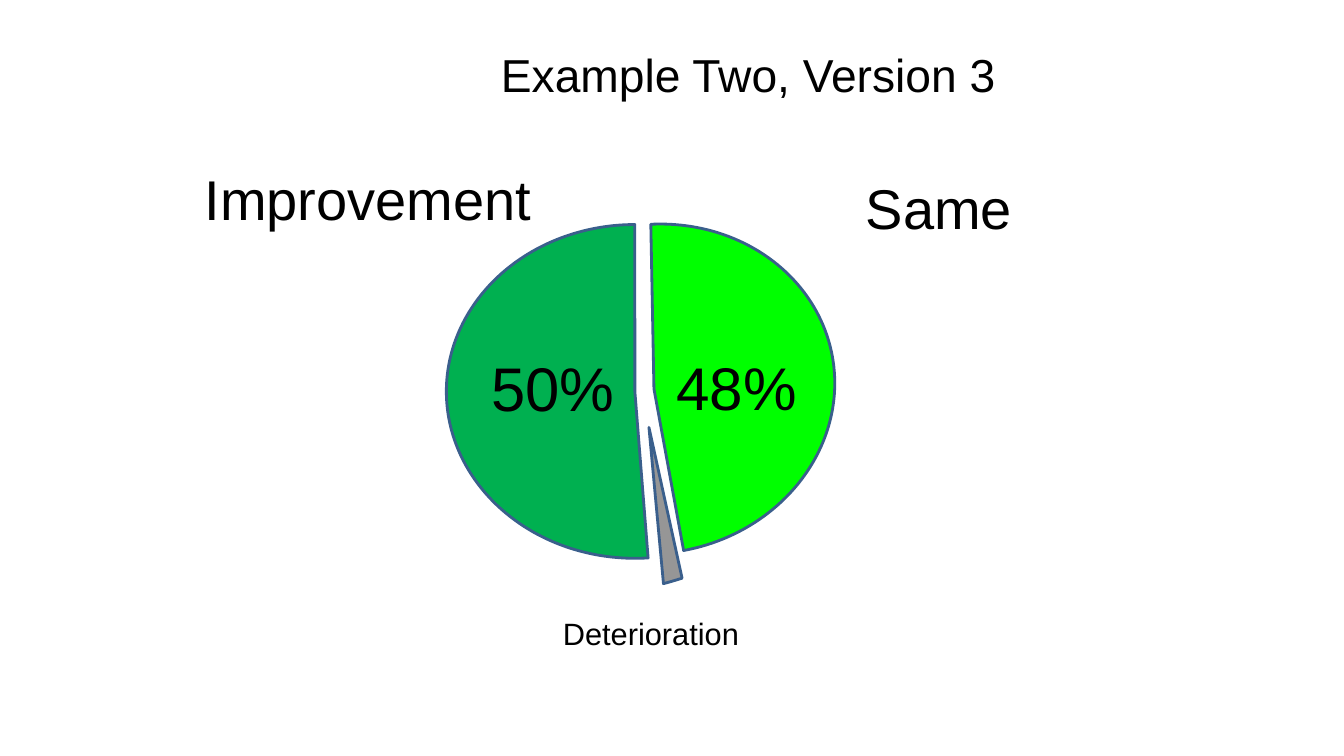
from pptx import Presentation
from pptx.dml.color import RGBColor
from pptx.enum.shapes import MSO_SHAPE
from pptx.enum.text import MSO_ANCHOR, PP_ALIGN
from pptx.util import Cm, Pt

TITLE = "Example Two, Version 3"
TITLE_BOX = (12.37, 1.02, 13.11, 1.68)
OUTLINE = "3A5F8C"

# Box in cm (left, top, width, height), rotation, start and end angle, fill
SLICES = [
    ((11.25, 5.66, 9.5, 8.41), 0, 85.44, 270, "00B050"),
    ((11.91, 5.66, 9.14, 8.28), 169.6, 99.3, 270, "00FF00"),
    ((10.26, 6.91, 12.19, 7.72), 338.3, 99.3, 106.38, "969696"),
]

# Text, box in cm, size in points, alignment
LABELS = [
    ("Improvement", (4.95, 4.27, 8.64, 1.6), 40, PP_ALIGN.CENTER),
    ("50%", (10.74, 8.95, 6.4, 1.8), 44, PP_ALIGN.CENTER),
    ("48%", (17.04, 8.95, 4.19, 1.8), 43, PP_ALIGN.LEFT),
    ("Same", (19.95, 4.5, 7.42, 1.6), 40, PP_ALIGN.CENTER),
    ("Deterioration", (10.93, 15.55, 10.95, 1.0), 22, PP_ALIGN.CENTER),
]


def color(hex_string):
    return RGBColor.from_string(hex_string)


def set_attributes(target, values):
    for name, value in values.items():
        setattr(target, name, value)


def write_text(shape, text, size, alignment, spacing, frame_format):
    frame = shape.text_frame
    frame.text = text
    set_attributes(frame, frame_format)
    paragraph = frame.paragraphs[0]
    set_attributes(paragraph, {"alignment": alignment, "line_spacing": spacing})
    font = paragraph.runs[0].font
    set_attributes(font, {"name": "Arial", "size": Pt(size)})
    font.color.rgb = color("000000")


def add_slice(slide, box, rotation, start, end, fill):
    shape = slide.shapes.add_shape(MSO_SHAPE.PIE, *map(Cm, box))
    shape.shadow.inherit = False
    shape.rotation = rotation
    # Angles are stored in 1/60000 degree, adjustments in 1/100000
    for index, angle in enumerate((start, end)):
        shape.adjustments[index] = angle * 0.6
    shape.fill.solid()
    shape.fill.fore_color.rgb = color(fill)
    shape.line.color.rgb = color(OUTLINE)
    shape.line.width = Pt(2)


def main():
    presentation = Presentation()
    set_attributes(presentation, {"slide_width": Cm(33.87), "slide_height": Cm(19.05)})
    slide = presentation.slides.add_slide(presentation.slide_layouts[5])

    # Pie slices
    for pie_slice in SLICES:
        add_slice(slide, *pie_slice)

    # Slice labels
    margins = ("margin_left", "margin_top", "margin_right", "margin_bottom")
    label_format = {
        "word_wrap": True,
        "vertical_anchor": MSO_ANCHOR.TOP,
        **dict.fromkeys(margins, 0),
    }
    for text, box, size, alignment in LABELS:
        label = slide.shapes.add_textbox(*map(Cm, box))
        write_text(label, text, size, alignment, 0.95, label_format)

    # Title
    title = slide.shapes.title
    set_attributes(title, dict(zip(("left", "top", "width", "height"), map(Cm, TITLE_BOX))))
    title_format = {"word_wrap": False, "vertical_anchor": MSO_ANCHOR.MIDDLE}
    write_text(title, TITLE, 33, PP_ALIGN.LEFT, 1.0, title_format)

    presentation.save("out.pptx")


if __name__ == "__main__":
    main()
